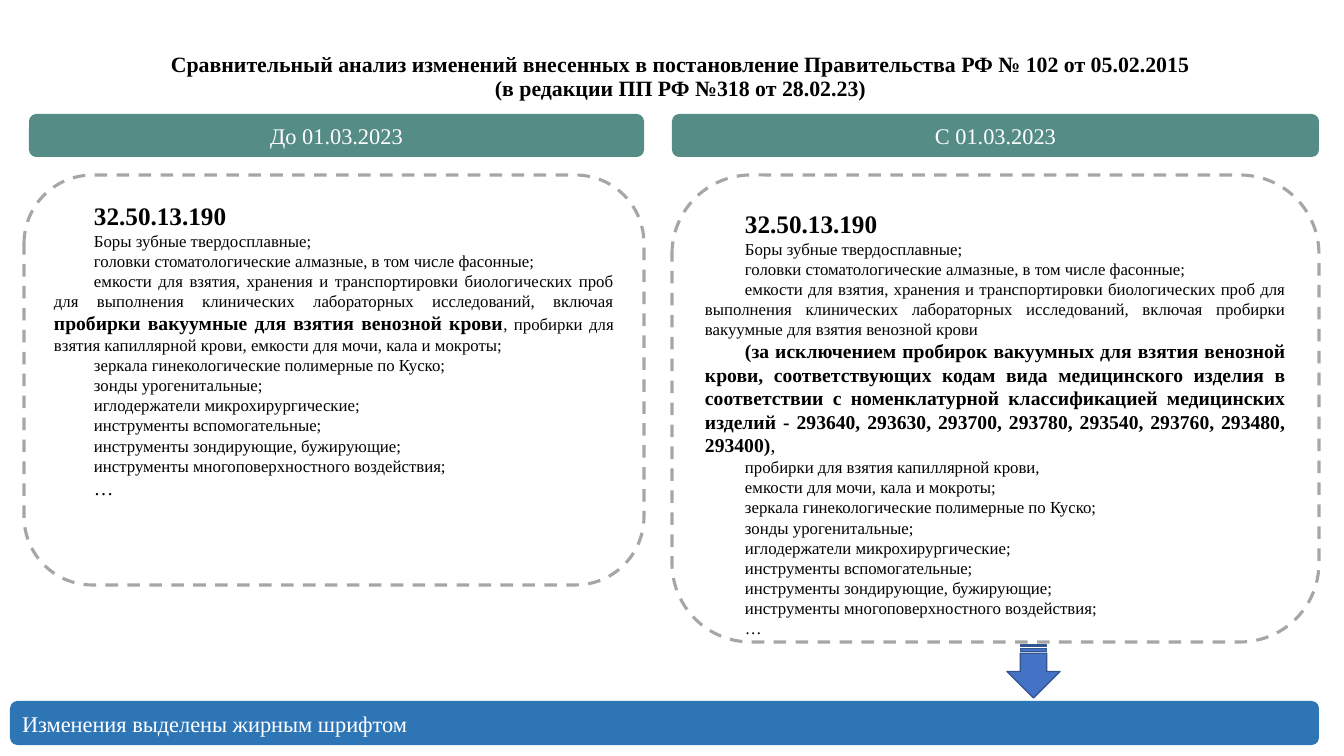
"""Build a slide comparing a list of medical goods before and after 01.03.2023."""
from pptx import Presentation
from pptx.dml.color import RGBColor
from pptx.enum.dml import MSO_LINE
from pptx.enum.shapes import MSO_SHAPE
from pptx.enum.text import MSO_ANCHOR, PP_ALIGN
from pptx.util import Emu, Pt

SCALE = 914400 / 100.8
FONT = "Times New Roman"
COLORS = {"header": "568C86", "footer": "2E75B6", "arrow": "4472C4",
          "arrow_edge": "325491", "dash": "A6A6A6", "light": "FFFFFF", "dark": "000000"}

TITLE = ["Сравнительный анализ изменений внесенных в постановление Правительства РФ № 102 от 05.02.2015",
         "(в редакции ПП РФ №318 от 28.02.23)"]
FOOTER = "Изменения выделены жирным шрифтом"
HEADERS = [("До 01.03.2023", (29, 114, 615, 43)),
           ("С 01.03.2023", (672, 114, 647, 43))]

CODE, PLAIN, CHANGED, LARGE = (18, True), (12, False), (14, True), (14, False)
OPENING = [
    [("32.50.13.190", CODE)],
    [("Боры зубные твердосплавные;", PLAIN)],
    [("головки стоматологические алмазные, в том числе фасонные;", PLAIN)],
]
TOOLS = [[(tool, PLAIN)] for tool in (
    "зеркала гинекологические полимерные по Куско;",
    "зонды урогенитальные;",
    "иглодержатели микрохирургические;",
    "инструменты вспомогательные;",
    "инструменты зондирующие, бужирующие;",
    "инструменты многоповерхностного воздействия;",
)]
CONTAINERS = ("емкости для взятия, хранения и транспортировки биологических проб "
              "для выполнения клинических лабораторных исследований, включая ")
TUBES = "пробирки вакуумные для взятия венозной крови"
EXCEPTION = ("(за исключением пробирок вакуумных для взятия венозной крови, соответствующих "
             "кодам вида медицинского изделия в соответствии с номенклатурной классификацией "
             "медицинских изделий - 293640, 293630, 293700, 293780, 293540, 293760, 293480, 293400)")
BEFORE = [
    *OPENING,
    [(CONTAINERS, PLAIN), (TUBES, CHANGED),
     (", пробирки для взятия капиллярной крови, емкости для мочи, кала и мокроты;", PLAIN)],
    *TOOLS,
    [("…", LARGE)],
]
AFTER = [
    *OPENING,
    [(CONTAINERS + TUBES, PLAIN)],
    [(EXCEPTION, CHANGED), (",", LARGE)],
    [("пробирки для взятия капиллярной крови,", PLAIN)],
    [("емкости для мочи, кала и мокроты;", PLAIN)],
    *TOOLS,
    [("…", PLAIN)],
]
PANELS = [(BEFORE, (24, 175, 620, 410), 0.167, 5),
          (AFTER, (672, 175, 647, 467), 0.169, 10)]
INDENT = 40


def px(length):
    return Emu(round(length * SCALE))


def color(name):
    return RGBColor.from_string(COLORS[name])


def add_box(page, kind, place, fill=None, edge=None, width=1):
    box = page.shapes.add_shape(kind, *map(px, place))
    box.shadow.inherit = False
    if fill:
        box.fill.solid()
        box.fill.fore_color.rgb = color(fill)
    else:
        box.fill.background()
    if edge:
        box.line.color.rgb = color(edge)
        box.line.width = Pt(width)
    else:
        box.line.fill.background()
    return box


def write(box, paragraphs, ink, align, anchor, spacing=None, indent=0):
    frame = box.text_frame
    frame.word_wrap = True
    frame.vertical_anchor = anchor
    for index, spans in enumerate(paragraphs):
        para = frame.add_paragraph() if index else frame.paragraphs[0]
        para.alignment = align
        para.line_spacing = spacing
        if indent:
            para._p.get_or_add_pPr().set("indent", str(px(indent)))
        styles = {style for _, style in spans}
        fonts = [para.font]
        for text, (size, bold) in spans:
            span = para.add_run()
            span.text = text
            if len(styles) > 1:
                span.font.size, span.font.bold = Pt(size), bold
            fonts.append(span.font)
        if len(styles) == 1:
            size, bold = spans[0][1]
            para.font.size, para.font.bold = Pt(size), bold
        for font in fonts[:1]:
            font.name = FONT
            font.color.rgb = color(ink)
        if ink == "dark":
            for font in fonts[1:]:
                font.color.rgb = color(ink)


def main():
    deck = Presentation()
    deck.slide_width, deck.slide_height = px(1344), px(756)
    page = deck.slides.add_slide(deck.slide_layouts[6])

    for label, place in HEADERS:
        header = add_box(page, MSO_SHAPE.ROUNDED_RECTANGLE, place, "header")
        write(header, [[(label, (16, False))]], "light", PP_ALIGN.CENTER, MSO_ANCHOR.MIDDLE)

    footer = add_box(page, MSO_SHAPE.ROUNDED_RECTANGLE, (10, 701, 1309, 44), "footer")
    write(footer, [[(FOOTER, (16, False))]], "light", PP_ALIGN.JUSTIFY, MSO_ANCHOR.MIDDLE, 1.07)

    arrow = add_box(page, MSO_SHAPE.STRIPED_RIGHT_ARROW, (1007, 645, 53, 53), "arrow", "arrow_edge")
    arrow.rotation = 90

    title = page.shapes.add_textbox(*map(px, (42, 0, 1277, 106)))
    write(title, [[(line, (15.6, True))] for line in TITLE], "dark",
          PP_ALIGN.CENTER, MSO_ANCHOR.BOTTOM, 0.9)

    for paragraphs, place, rounding, inset in PANELS:
        panel = add_box(page, MSO_SHAPE.ROUNDED_RECTANGLE, place, edge="dash", width=2.25)
        panel.line.dash_style = MSO_LINE.DASH
        panel.adjustments[0] = rounding
        panel.text_frame.margin_top = px(inset)
        write(panel, paragraphs, "dark", PP_ALIGN.JUSTIFY, MSO_ANCHOR.TOP, indent=INDENT)

    deck.save("out.pptx")


if __name__ == "__main__":
    main()
